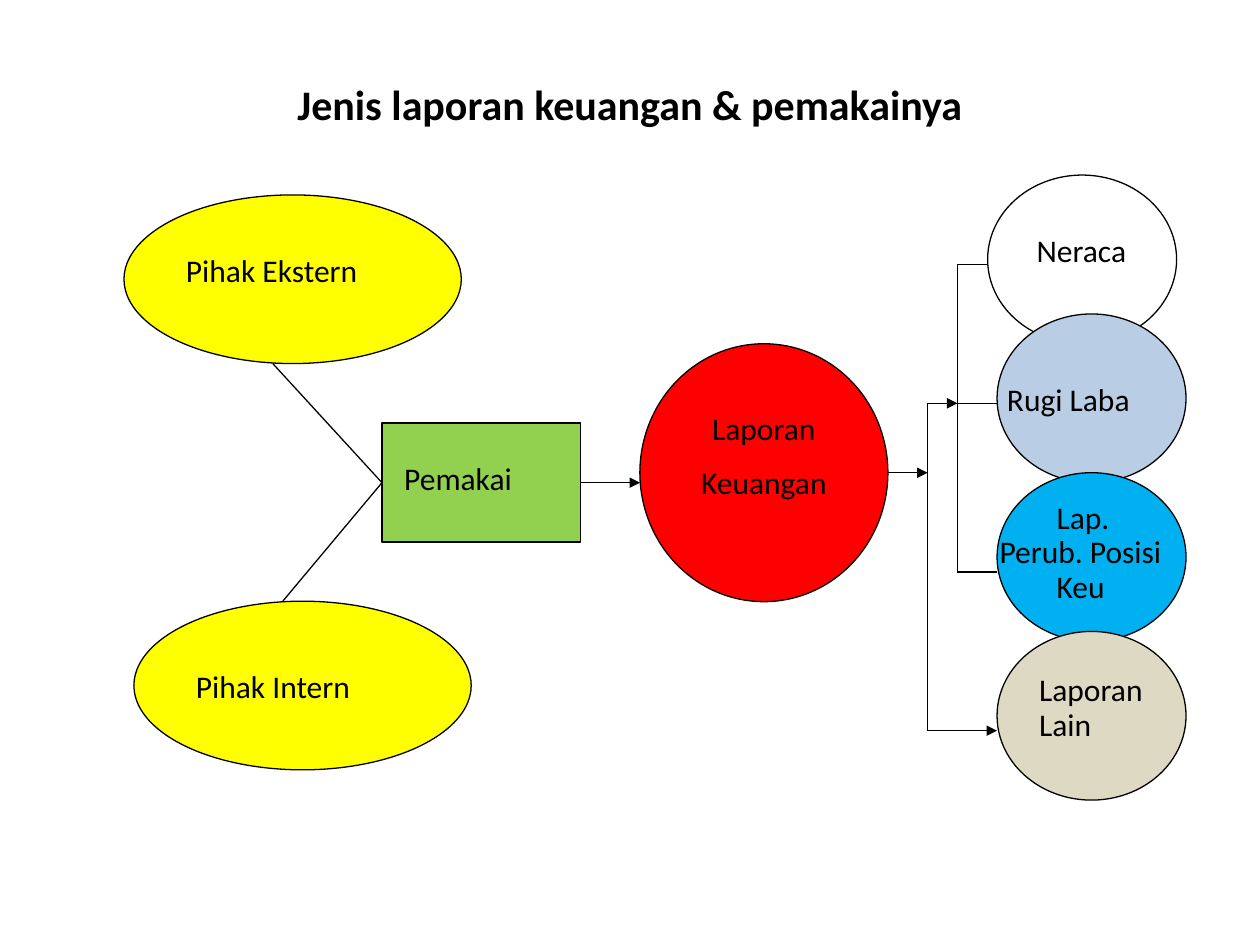
from lxml import etree
from pptx import Presentation
from pptx.dml.color import RGBColor
from pptx.enum.shapes import MSO_CONNECTOR, MSO_SHAPE
from pptx.enum.text import MSO_ANCHOR, PP_ALIGN
from pptx.oxml.ns import qn
from pptx.util import Cm, Pt

OVAL, RECTANGLE = MSO_SHAPE.OVAL, MSO_SHAPE.RECTANGLE
STRAIGHT = MSO_CONNECTOR.STRAIGHT
LEFT, CENTER = PP_ALIGN.LEFT, PP_ALIGN.CENTER
TOP, MIDDLE = MSO_ANCHOR.TOP, MSO_ANCHOR.MIDDLE
FONT, BLACK = "Calibri", "000000"

# Content, all lengths in centimetres
TITLE = "Jenis laporan keuangan & pemakainya"
PARTY_SIZE = (6.8, 3.4)
REPORT_SIZE = (3.81, 3.4)
REPORT_LEFT, REPORT_TOP, REPORT_STEP = 20.1, 6.33, 3.2
REPORT_COLORS = ["B9CDE5", "00B0F0", "DDD9C3"]

# Shape, left, top, width, height, fill
NODES = [
    (OVAL, 2.5, 3.93, *PARTY_SIZE, "FFFF00"),
    (OVAL, 2.7, 12.12, *PARTY_SIZE, "FFFF00"),
    (RECTANGLE, 7.7, 8.53, 4, 2.4, "92D050"),
    (OVAL, 12.9, 6.93, 5, 5.2, "FF0000"),
    (OVAL, 19.91, 3.53, *REPORT_SIZE, "FFFFFF"),
]
NODES += [
    (OVAL, REPORT_LEFT, REPORT_TOP + row * REPORT_STEP, *REPORT_SIZE, color)
    for row, color in enumerate(REPORT_COLORS)
]

# Left, top, width, height, alignment, line spacing, lines of (text, indent)
LABELS = [
    (3.5, 4.93, 4.8, 1.02, LEFT, 1, [("Pihak Ekstern", 0)]),
    (3.7, 13.33, 5.2, 1.02, LEFT, 1, [("Pihak Intern", 0)]),
    (7.9, 9.13, 3.6, 1.02, LEFT, 1, [("Pemakai", 0)]),
    (13.5, 8.13, 3.8, 2.16, CENTER, 1, [("Laporan", 0), ("Keuangan", 0)]),
    (20.1, 4.53, 3.4, 1.02, CENTER, 1, [("Neraca", 0)]),
    (19.9, 7.53, 3.8, 1.02, LEFT, 1, [("Rugi Laba", 0.15)]),
    (19.9, 10.24, 4.8, 2.24, LEFT, 0.5,
     [("Lap.", 1.15), ("Perub. Posisi", 0), ("Keu", 1.15)]),
    (20.7, 13.72, 3.6, 1.4, LEFT, 0.5, [("Laporan", 0), ("Lain", 0)]),
]

# Start, end, arrowhead at the end
USER_Y = 9.73
OUTER_X, INNER_X = 18.7, 19.3
NERACA_Y, RUGI_Y, POSISI_Y, LAIN_Y = 5.33, 8.13, 11.53, 14.73
LINES = [
    ((5.5, 7.33), (7.7, USER_Y), False),
    ((7.7, USER_Y), (5.7, 12.12), False),
    ((11.7, USER_Y), (12.9, USER_Y), True),
    ((19.91, NERACA_Y), (INNER_X, NERACA_Y), False),
    ((INNER_X, NERACA_Y), (INNER_X, POSISI_Y), False),
    ((INNER_X, POSISI_Y), (REPORT_LEFT, POSISI_Y), False),
    ((INNER_X, RUGI_Y), (REPORT_LEFT, RUGI_Y), False),
    ((OUTER_X, RUGI_Y), (INNER_X, RUGI_Y), True),
    ((OUTER_X, RUGI_Y), (OUTER_X, LAIN_Y), False),
    ((OUTER_X, LAIN_Y), (REPORT_LEFT, LAIN_Y), True),
    ((17.9, 9.53), (OUTER_X, 9.53), True),
]


def rgb(color):
    return RGBColor.from_string(color)


def draw_outline(line):
    line.color.rgb = rgb(BLACK)
    line.width = Pt(0.75)


def add_node(page, kind, left, top, width, height, fill):
    node = page.shapes.add_shape(kind, Cm(left), Cm(top), Cm(width), Cm(height))
    node.shadow.inherit = False
    node.fill.solid()
    node.fill.fore_color.rgb = rgb(fill)
    draw_outline(node.line)


def add_line(page, start, end, arrow):
    points = [Cm(value) for value in (*start, *end)]
    connector = page.shapes.add_connector(STRAIGHT, *points)
    draw_outline(connector.line)
    if arrow:
        outline = connector.line._get_or_add_ln()
        etree.SubElement(outline, qn("a:tailEnd"), type="triangle")
    etree.SubElement(connector._element.spPr, qn("a:effectLst"))


def add_label(page, left, top, width, height, align, spacing, lines,
              size=18, bold=False, anchor=TOP):
    box = page.shapes.add_textbox(Cm(left), Cm(top), Cm(width), Cm(height))
    frame = box.text_frame
    frame.word_wrap = True
    frame.vertical_anchor = anchor
    for number, (text, indent) in enumerate(lines):
        para = frame.add_paragraph() if number else frame.paragraphs[0]
        para.alignment = align
        para.line_spacing = spacing
        para.space_before = Pt(size / 2 if number else 0)
        if indent:
            para._p.get_or_add_pPr().set("marL", str(Cm(indent)))
        span = para.add_run()
        span.text = text
        span.font.name = FONT
        span.font.size = Pt(size)
        span.font.bold = bold
        span.font.color.rgb = rgb(BLACK)


def main():
    deck = Presentation()
    deck.slide_width, deck.slide_height = Cm(25.4), Cm(19.05)
    page = deck.slides.add_slide(deck.slide_layouts[6])

    # Title
    add_label(page, 1.27, 1.27, 22.86, 1.65, CENTER, 1, [(TITLE, 0)],
              size=24, bold=True, anchor=MIDDLE)

    # Diagram, from back to front
    for node in NODES:
        add_node(page, *node)
    for line in LINES:
        add_line(page, *line)
    for label in LABELS:
        add_label(page, *label)

    deck.save("out.pptx")


if __name__ == "__main__":
    main()
